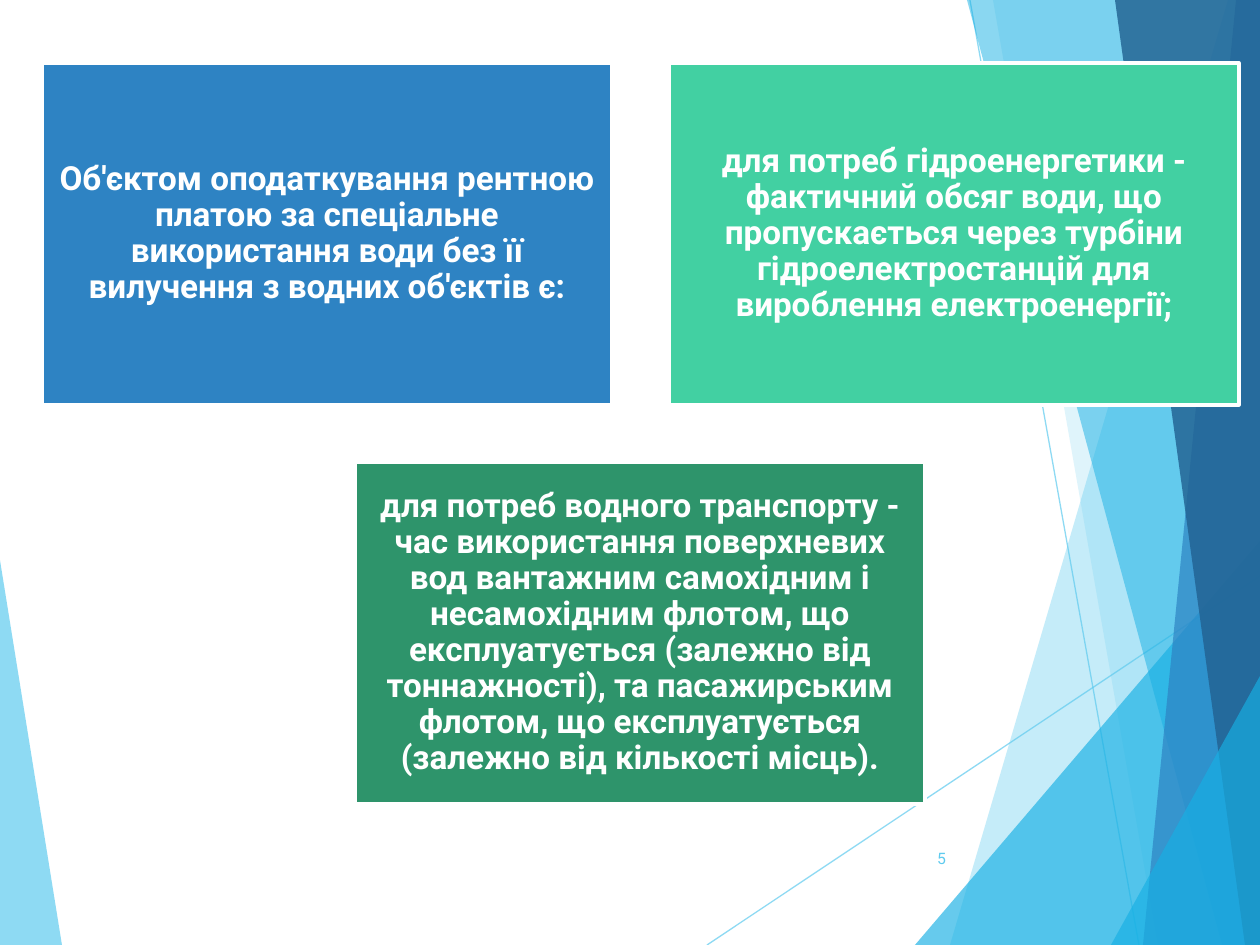
"""Build the slide on the objects of rent payment for special water use."""
from dataclasses import dataclass

from lxml import etree
from pptx import Presentation
from pptx import util as u
from pptx.dml.color import RGBColor
from pptx.enum import shapes, text
from pptx.oxml import ns

PX = 914400 / 126
WIDE, HIGH = 1260, 945


@dataclass(frozen=True)
class Theme:
    font: str = "Roboto"
    white: str = "FFFFFF"
    sky: str = "5FCBEF"
    cyan: str = "17B0E4"
    blue: str = "2E83C3"
    navy: str = "226292"
    mint: str = "42D0A2"
    green: str = "2E946B"
    body: int = 19
    small: int = 9
    edge: float = 2
    hair: float = 0.75


def emu(px):
    return u.Emu(round(px * PX))


def fade(fill, share):
    color = fill._xPr.find(".//" + ns.qn("a:srgbClr"))
    etree.SubElement(color, ns.qn("a:alpha"), val=str(share * 1000))


def write(frame, words, *, font, size, color, bold=False,
          align=text.PP_ALIGN.CENTER, pad=(13, 6), lead=None):
    frame.word_wrap = True
    frame.vertical_anchor = text.MSO_ANCHOR.MIDDLE
    frame.margin_left = frame.margin_right = emu(pad[0])
    frame.margin_top = frame.margin_bottom = emu(pad[1])
    para = frame.paragraphs[0]
    para.alignment = align
    if lead:
        para.line_spacing = lead
    run = para.add_run()
    run.text = words
    run.font.name = font
    run.font.size = u.Pt(size)
    run.font.bold = bold
    run.font.color.rgb = RGBColor.from_string(color)


class Page:
    def __init__(self, slide, theme):
        self.slide, self.theme = slide, theme

    def facet(self, points, color, share):
        pen = self.slide.shapes.build_freeform(*points[0], scale=PX)
        pen.add_line_segments(points[1:], close=True)
        shape = pen.convert_to_shape()
        shape.shadow.inherit = False
        shape.fill.solid()
        shape.fill.fore_color.rgb = RGBColor.from_string(color)
        fade(shape.fill, share)
        shape.line.fill.background()

    def line(self, start, end, color, share):
        ends = [emu(px) for px in (*start, *end)]
        link = self.slide.shapes.add_connector(
            shapes.MSO_CONNECTOR.STRAIGHT, *ends)
        link.line.width = u.Pt(self.theme.hair)
        link.line.color.rgb = RGBColor.from_string(color)
        fade(link.line.fill, share)
        etree.SubElement(link._element.spPr, ns.qn("a:effectLst"))

    def card(self, box, words, color):
        look = self.theme
        shape = self.slide.shapes.add_shape(
            shapes.MSO_SHAPE.RECTANGLE, *map(emu, box))
        shape.shadow.inherit = False
        shape.fill.solid()
        shape.fill.fore_color.rgb = RGBColor.from_string(color)
        shape.line.color.rgb = RGBColor.from_string(look.white)
        shape.line.width = u.Pt(look.edge)
        write(shape.text_frame, words, font=look.font, size=look.body,
              color=look.white, bold=True, pad=(10, 10), lead=0.9)

    def label(self, box, words):
        look = self.theme
        shape = self.slide.shapes.add_textbox(*map(emu, box))
        write(shape.text_frame, words, font=look.font, size=look.small,
              color=look.sky, align=text.PP_ALIGN.RIGHT)


def main():
    deck = Presentation()
    deck.slide_width, deck.slide_height = emu(WIDE), emu(HIGH)
    look = Theme()
    page = Page(deck.slides.add_slide(deck.slide_layouts[6]), look)

    page.facet([(0, 560), (62, HIGH), (0, HIGH)], look.sky, 70)
    page.line((707, HIGH), (WIDE, 576), look.sky, 70)
    page.line((970, 0), (1139, HIGH), look.sky, 70)
    facets = [
        ((1228, 0), 950, look.sky, 36),
        ((993, 0), 1158, look.sky, 20),
        ((WIDE, 541), 915, look.cyan, 66),
        ((967, 0), 1222, look.cyan, 50),
        ((1236, 0), 1143, look.blue, 70),
        ((1115, 0), 1245, look.navy, 82),
        ((WIDE, 676), 1111, look.cyan, 66),
    ]
    for top, foot, color, share in facets:
        points = [top, (foot, HIGH), (WIDE, HIGH)]
        if top[0] < WIDE:
            points.append((WIDE, 0))
        page.facet(points, color, share)

    left, top, wide, high, gap = 42, 63, 570, 342, 57
    step = wide + gap
    cards = [
        (0, 0, look.blue,
         "Об'єктом оподаткування рентною платою за спеціальне використання "
         "води без її вилучення з водних об'єктів є:"),
        (1, 0, look.mint,
         "для потреб гідроенергетики - фактичний обсяг води, що пропускається "
         "через турбіни гідроелектростанцій для вироблення електроенергії;"),
        (0.5, 1, look.green,
         "для потреб водного транспорту - час використання поверхневих вод "
         "вантажним самохідним і несамохідним флотом, що експлуатується "
         "(залежно від тоннажності), та пасажирським флотом, що "
         "експлуатується (залежно від кількості місць)."),
    ]
    for col, row, color, words in cards:
        box = (left + int(col * step), top + row * (high + gap), wide, high)
        page.card(box, words, color)
    page.label((888, 833, 71, 50), "5")

    deck.save("out.pptx")


if __name__ == "__main__":
    main()
